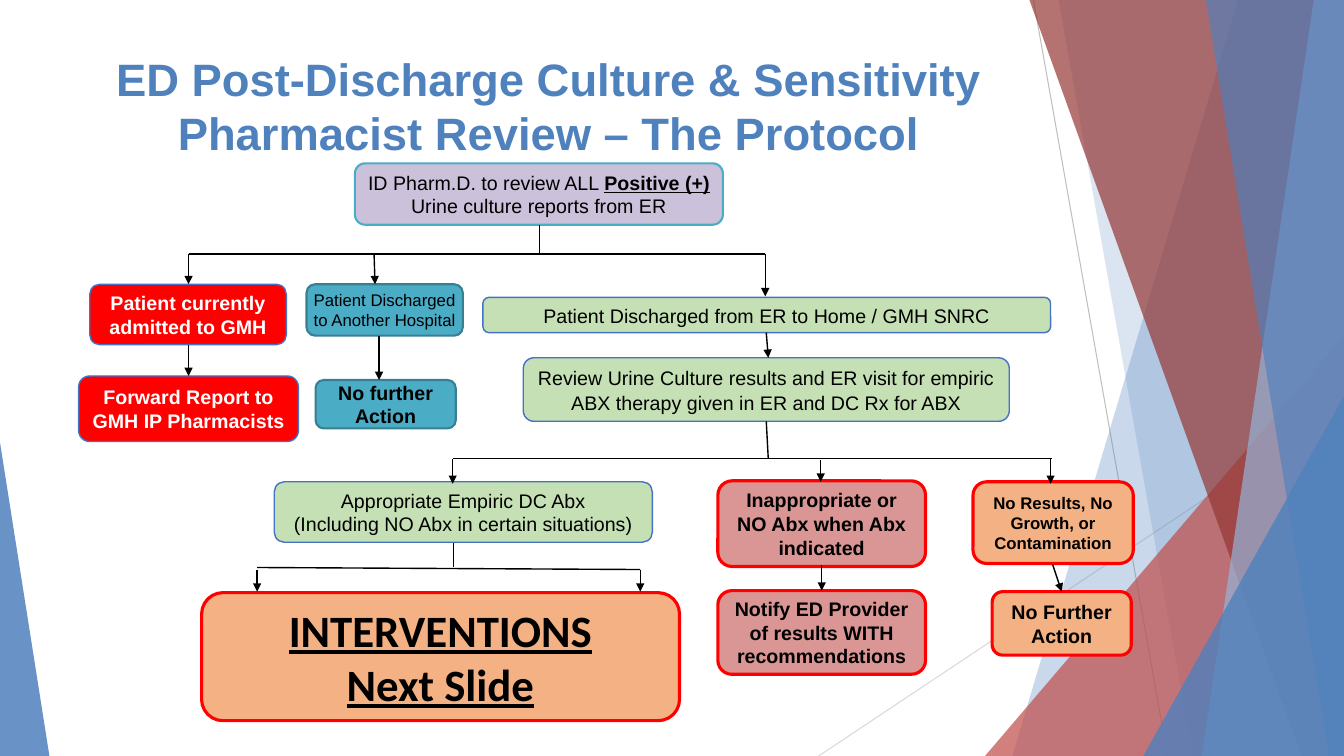
from lxml.etree import SubElement
from pptx import Presentation
from pptx.dml.color import RGBColor
from pptx.enum.shapes import MSO_CONNECTOR as CONN, MSO_SHAPE as SHAPE
from pptx.enum.text import MSO_ANCHOR as ANCHOR, PP_ALIGN as ALIGN
from pptx.oxml.ns import qn
from pptx.util import Inches, Pt

BLACK, WHITE, RED = "000000", "FFFFFF", "FF0000"
BLUE, EDGE, TEAL, TEAL_EDGE = "4F81BD", "4472C4", "4BACC6", "377F92"
GREEN, ROSE, ORANGE, LILAC = "C5E0B4", "D99694", "F4B183", "CCC1DA"


def rgb(value):
    return RGBColor.from_string(value)


def grid(*cells):
    """Columns and rows are a tenth of an inch each."""
    return [Inches(c / 10) for c in cells]


class Board:
    font = {"name": "Arial", "size": Pt(14), "bold": False}

    def __init__(self, prs):
        self.s = prs.slides.add_slide(prs.slide_layouts[5])

    def fill(self, sp, color, alpha=None):
        sp.shadow.inherit = False
        sp.fill.solid()
        sp.fill.fore_color.rgb = rgb(color)
        if alpha:
            clr = sp._element.spPr.find(qn("a:solidFill"))[0]
            SubElement(clr, qn("a:alpha"), val=str(alpha * 1000))

    def label(self, sp, paras, color=BLACK, margin=0.1, para=None, **font):
        """Each paragraph is a string or a list of (text, format) runs."""
        tf = sp.text_frame
        frame = {"word_wrap": True, "vertical_anchor": ANCHOR.MIDDLE,
                 "margin_left": Inches(margin), "margin_right": Inches(margin)}
        for key, value in frame.items():
            setattr(tf, key, value)
        for i, runs in enumerate(paras):
            p = tf.add_paragraph() if i else tf.paragraphs[0]
            for key, value in {"alignment": ALIGN.CENTER, **(para or {})}.items():
                setattr(p, key, value)
            for text, extra in [(runs, {})] if isinstance(runs, str) else runs:
                r = p.add_run()
                r.text = text
                for key, value in {**self.font, **font, **extra}.items():
                    setattr(r.font, key, value)
                r.font.color.rgb = rgb(color)

    def title(self, at, text, **style):
        sp = self.s.shapes.title
        sp.left, sp.top, sp.width, sp.height = grid(*at)
        self.label(sp, [text], **style)

    def box(self, at, paras, fill, edge, weight, **style):
        sp = self.s.shapes.add_shape(SHAPE.ROUNDED_RECTANGLE, *grid(*at))
        self.fill(sp, fill)
        sp.line.color.rgb = rgb(edge)
        sp.line.width = Pt(weight)
        self.label(sp, paras, **style)

    def line(self, ends, color=BLACK, weight=1, arrow=False):
        cx = self.s.shapes.add_connector(CONN.STRAIGHT, *grid(*ends))
        cx.line.color.rgb = rgb(color)
        cx.line.width = Pt(weight)
        props = cx._element.spPr
        if arrow:
            SubElement(props.find(qn("a:ln")), qn("a:tailEnd"), type="triangle")
        SubElement(props, qn("a:effectLst"))

    def facet(self, points, color, alpha):
        start, *rest = [grid(*pt) for pt in points]
        fb = self.s.shapes.build_freeform(*start)
        fb.add_line_segments(rest, close=True)
        sp = fb.convert_to_shape()
        self.fill(sp, color, alpha)
        sp.line.fill.background()

    def triangle(self, at, tip, color, alpha):
        sp = self.s.shapes.add_shape(SHAPE.ISOSCELES_TRIANGLE, *grid(*at))
        sp.adjustments[0] = tip
        self.fill(sp, color, alpha)
        sp.line.fill.background()


def draw_backdrop(board):
    right, bottom = 133.3, 75

    def band(top, foot, color, alpha):
        board.facet([(top, 0), (right, 0), (right, bottom), (foot, bottom)],
                    color, alpha)

    board.line((102.5, 0, 115.8, bottom), "BFBFBF", 0.75)
    board.line((right, 40.3, 81.2, bottom), "D9D9D9", 0.75)
    band(122.8, 100.4, BLUE, 30)
    band(105, 118.3, BLUE, 20)
    board.triangle((97.7, 33.3, 35.6, 41.7), 1, "C0504D", 72)
    band(102.1, 129.1, "953735", 70)
    band(130.3, 119.2, "95B3D7", 70)
    band(119.6, 131.8, BLUE, 65)
    board.triangle((113.4, 39.3, 19.9, 35.7), 1, BLUE, 80)
    board.triangle((0, 43.9, 4.9, 31.1), 0, BLUE, 85)


def draw_boxes(board):
    # Looks shared by the boxes of one branch
    admitted = dict(fill=RED, edge=EDGE, weight=1, color=WHITE, bold=True)
    moved = dict(fill=TEAL, edge=TEAL_EDGE, weight=1.5, margin=0.02)
    empiric = dict(fill=GREEN, edge=EDGE, weight=1)
    home = dict(empiric, para={"line_spacing": 1.07, "space_after": Pt(8)})
    wrong = dict(fill=ROSE, edge=RED, weight=2.25, bold=True)
    closing = dict(wrong, fill=ORANGE)
    start = dict(fill=LILAC, edge=TEAL, weight=1.5)
    strong = {"bold": True, "underline": True}

    # Start
    board.box((35.2, 16.2, 36.5, 6.1),
              [[("ID Pharm.D. to review ALL ", {}), ("Positive (+) ", strong),
                ("Urine culture reports from ER", {})]], **start)
    # Where the patient is
    board.box((8.9, 28.2, 19.5, 6), ["Patient currently admitted to GMH"], **admitted)
    board.box((7.8, 37.3, 21.8, 6.5), ["Forward Report to GMH IP Pharmacists"], **admitted)
    board.box((30.4, 28.2, 15.5, 5.1), ["Patient Discharged to Another Hospital"],
              size=Pt(12), **moved)
    board.box((31.3, 37.7, 13.9, 4.8), ["No further Action"], bold=True, **moved)
    board.box((47.9, 29.5, 56.3, 3.5),
              ["Patient Discharged from ER to Home / GMH SNRC"], **home)
    board.box((51.9, 35.5, 48.2, 6.3),
              ["Review Urine Culture results and ER visit for empiric "
               "ABX therapy given in ER and DC Rx for ABX"], **home)
    # What the review finds
    board.box((27.2, 47.8, 37.5, 6),
              ["Appropriate Empiric DC Abx", "(Including NO Abx in certain situations)"],
              **empiric)
    board.box((71.2, 47.7, 20.6, 8.5),
              ["Inappropriate or", "NO Abx when Abx indicated"], **wrong)
    board.box((71.2, 58.6, 20.6, 8.3),
              ["Notify ED Provider of results WITH recommendations"], **wrong)
    board.box((96.5, 47.8, 15.9, 8.1), ["No Results, No Growth, or Contamination"],
              size=Pt(12), **closing)
    board.box((98.4, 58.7, 13.8, 6.3), ["No Further Action"], **closing)
    board.box((20, 58.8, 47.4, 12.7), ["INTERVENTIONS", "Next Slide"],
              name="Calibri", size=Pt(32), underline=True, **closing)


def draw_links(board):
    # Stems and crossbars
    for ends in [(53.5, 22.3, 53.5, 25.2), (18.7, 25.2, 75.9, 25.2),
                 (76, 41.8, 76.2, 45.5), (44.9, 45.5, 104.3, 45.5),
                 (45, 53.9, 45, 56.3), (25.5, 56.3, 63.5, 56.5)]:
        board.line(ends)
    # Arrows into the boxes
    for ends in [(18.7, 25.2, 18.7, 28.2), (37.1, 25.2, 37.2, 28.2),
                 (75.9, 25.2, 75.9, 29.4), (18.7, 34.2, 18.7, 37.3),
                 (37.6, 33.3, 37.6, 37.7), (76, 33, 76.2, 35.5),
                 (44.9, 45.5, 44.9, 48), (81.4, 45.6, 81.4, 47.8),
                 (104.2, 45.5, 104.2, 48), (81.5, 56.1, 81.5, 58.6),
                 (104.4, 56, 105.3, 58.7), (25.5, 56.5, 25.5, 58.7),
                 (63.5, 56.5, 63.5, 58.7)]:
        board.line(ends, arrow=True)


def main():
    prs = Presentation()
    prs.slide_width, prs.slide_height = Inches(13.33), Inches(7.5)
    board = Board(prs)
    draw_backdrop(board)
    board.title((7.4, 3.9, 94, 13.1),
                "ED Post-Discharge Culture & Sensitivity Pharmacist Review – The Protocol",
                color=BLUE, size=Pt(32.4), bold=True)
    draw_boxes(board)
    draw_links(board)
    prs.save("out.pptx")


if __name__ == "__main__":
    main()
